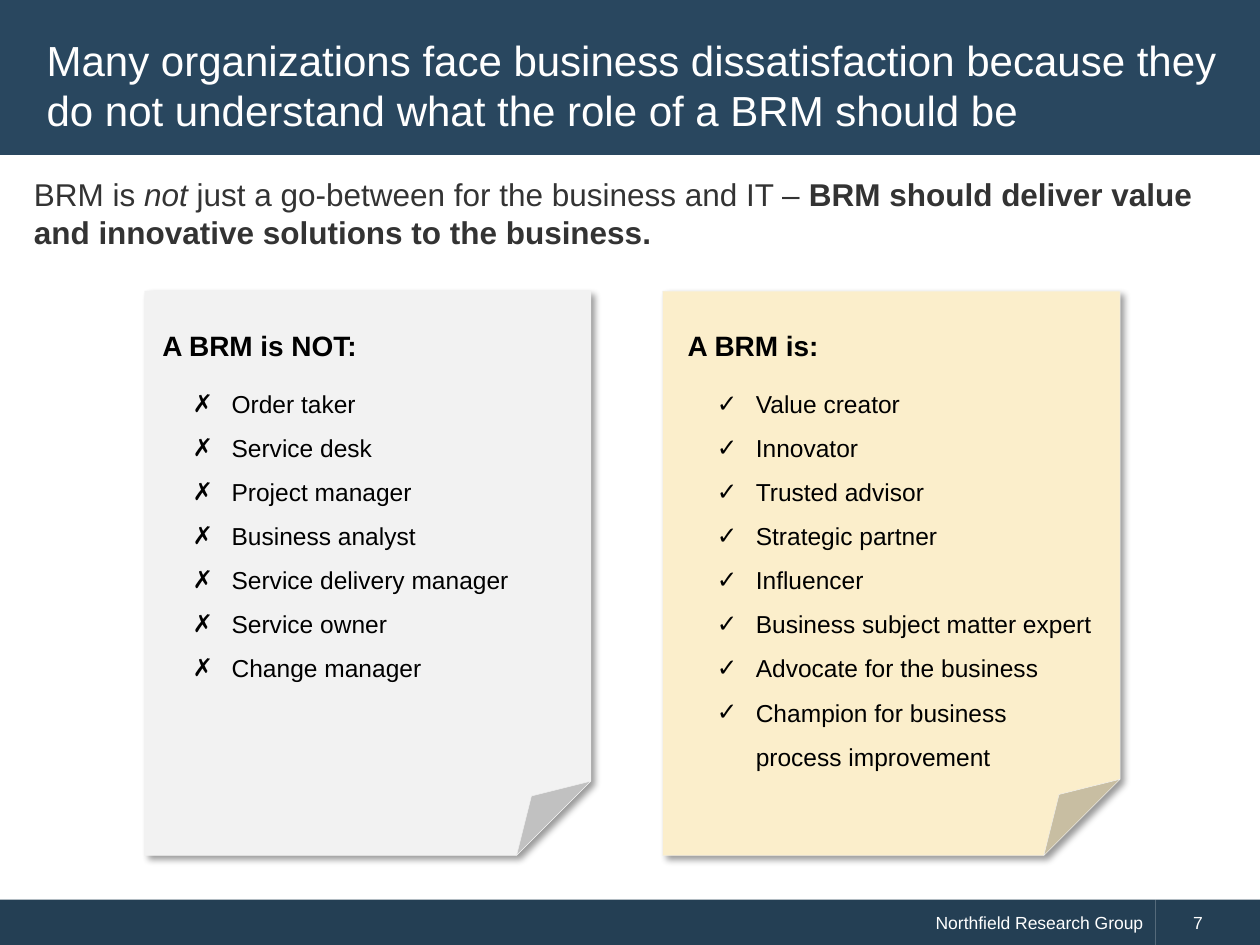
from lxml.etree import SubElement
from pptx import Presentation
from pptx.dml.color import RGBColor
from pptx.enum.shapes import MSO_SHAPE
from pptx.enum.text import MSO_ANCHOR, MSO_AUTO_SIZE, PP_ALIGN
from pptx.oxml.ns import qn
from pptx.util import Inches, Pt

COLORS = {
    "header": "29475F",
    "footer": "243F54",
    "white": "FFFFFF",
    "body": "333333",
    "black": "000000",
    "grey_note": "F2F2F2",
    "yellow_note": "FBEECB",
}

NOT_ROLES = ["Order taker", "Service desk", "Project manager", "Business analyst",
             "Service delivery manager", "Service owner", "Change manager"]
ROLES = ["Value creator", "Innovator", "Trusted advisor", "Strategic partner",
         "Influencer", "Business subject matter expert", "Advocate for the business",
         "Champion for business process improvement"]


def rgb(name):
    return RGBColor.from_string(COLORS[name])


def format_run(r, size, color, bold=False, italic=False):
    r.font.name = "Arial"
    r.font.size = Pt(size)
    r.font.color.rgb = rgb(color)
    r.font.bold = bold
    r.font.italic = italic


def add_box(s, shape, box, fill):
    sp = s.shapes.add_shape(shape, *map(Inches, box))
    sp.shadow.inherit = False
    sp.fill.solid()
    sp.fill.fore_color.rgb = rgb(fill)
    sp.line.fill.background()
    return sp


def add_text(s, box):
    tf = s.shapes.add_textbox(*map(Inches, box)).text_frame
    tf.word_wrap = True
    return tf


def add_title(s, text):
    add_box(s, MSO_SHAPE.RECTANGLE, (0, 0, 10, 1.23), "header")
    title = s.shapes.title
    s.shapes._spTree.append(title._element)  # bring in front of the band
    title.left, title.top, title.width, title.height = map(Inches, (0.27, 0.19, 9.53, 0.96))
    tf = title.text_frame
    tf.text = text
    tf.auto_size = MSO_AUTO_SIZE.NONE
    tf.vertical_anchor = MSO_ANCHOR.MIDDLE
    p = tf.paragraphs[0]
    p.alignment = PP_ALIGN.LEFT
    format_run(p.runs[0], 24, "white")


def add_footer_cell(s, left, width, text, align, indent):
    sp = add_box(s, MSO_SHAPE.RECTANGLE, (left, 7.14, width, 0.37), "footer")
    tf = sp.text_frame
    tf.text = text
    tf.margin_left = Inches(indent)
    tf.vertical_anchor = MSO_ANCHOR.MIDDLE
    p = tf.paragraphs[0]
    p.alignment = align
    format_run(p.runs[0], 10, "white")


def add_statement(s):
    p = add_text(s, (0.17, 1.34, 9.72, 0.71)).paragraphs[0]
    for text, bold, italic in [
        ("BRM is ", False, False),
        ("not", False, True),
        (" just a go-between for the business and IT – ", False, False),
        ("BRM should deliver value and innovative solutions to the business.", True, False),
    ]:
        r = p.add_run()
        r.text = text
        format_run(r, 18, "body", bold, italic)


def add_note(s, left, width, fill):
    sp = add_box(s, MSO_SHAPE.FOLDED_CORNER, (left, 2.31, width, 4.48), fill)
    sp.line.color.rgb = rgb("grey_note")
    sp.line.width = Pt(0.25)
    # Soft shadow towards the lower right
    effects = sp._element.spPr.find(qn("a:effectLst"))
    shadow = SubElement(effects, qn("a:outerShdw"), blurRad=str(Pt(4)), dist=str(Pt(3)),
                        dir=str(45 * 60000), algn="tl", rotWithShape="0")
    color = SubElement(shadow, qn("a:srgbClr"), val=COLORS["black"])
    SubElement(color, qn("a:alpha"), val="40000")


def add_heading(s, left, width, text):
    tf = add_text(s, (left, 2.54, width, 0.39))
    tf.text = text
    p = tf.paragraphs[0]
    p.line_spacing = 1.07
    format_run(p.runs[0], 16, "black", bold=True)


def add_bullets(s, box, mark, items):
    tf = add_text(s, box)
    tf.text = "\n".join(items)
    for p in tf.paragraphs:
        p.line_spacing = 1.5
        format_run(p.runs[0], 14, "black")
        pPr = p._p.get_or_add_pPr()
        pPr.set("marL", str(Inches(0.31)))
        pPr.set("indent", str(Inches(-0.31)))
        SubElement(pPr, qn("a:buFont"), typeface="Arial")
        SubElement(pPr, qn("a:buChar"), char=mark)


def main():
    prs = Presentation()
    prs.slide_width, prs.slide_height = Inches(10), Inches(7.5)
    s = prs.slides.add_slide(prs.slide_layouts[5])

    # Footer, header and statement
    add_footer_cell(s, 0, 9.17, "Northfield Research Group", PP_ALIGN.RIGHT, 0.39)
    add_footer_cell(s, 9.17, 0.83, "7", PP_ALIGN.LEFT, 0.3)
    add_title(s, "Many organizations face business dissatisfaction because they "
                 "do not understand what the role of a BRM should be")
    add_statement(s)

    # Two notes side by side
    add_note(s, 5.26, 3.63, "yellow_note")
    add_note(s, 1.15, 3.54, "grey_note")
    add_bullets(s, (1.43, 2.92, 2.99, 2.79), "✗", NOT_ROLES)
    add_bullets(s, (5.59, 2.92, 3.21, 3.28), "✓", ROLES)
    add_heading(s, 1.19, 3.62, "A BRM is NOT:")
    add_heading(s, 5.36, 3.44, "A BRM is:")

    prs.save("out.pptx")


if __name__ == "__main__":
    main()
